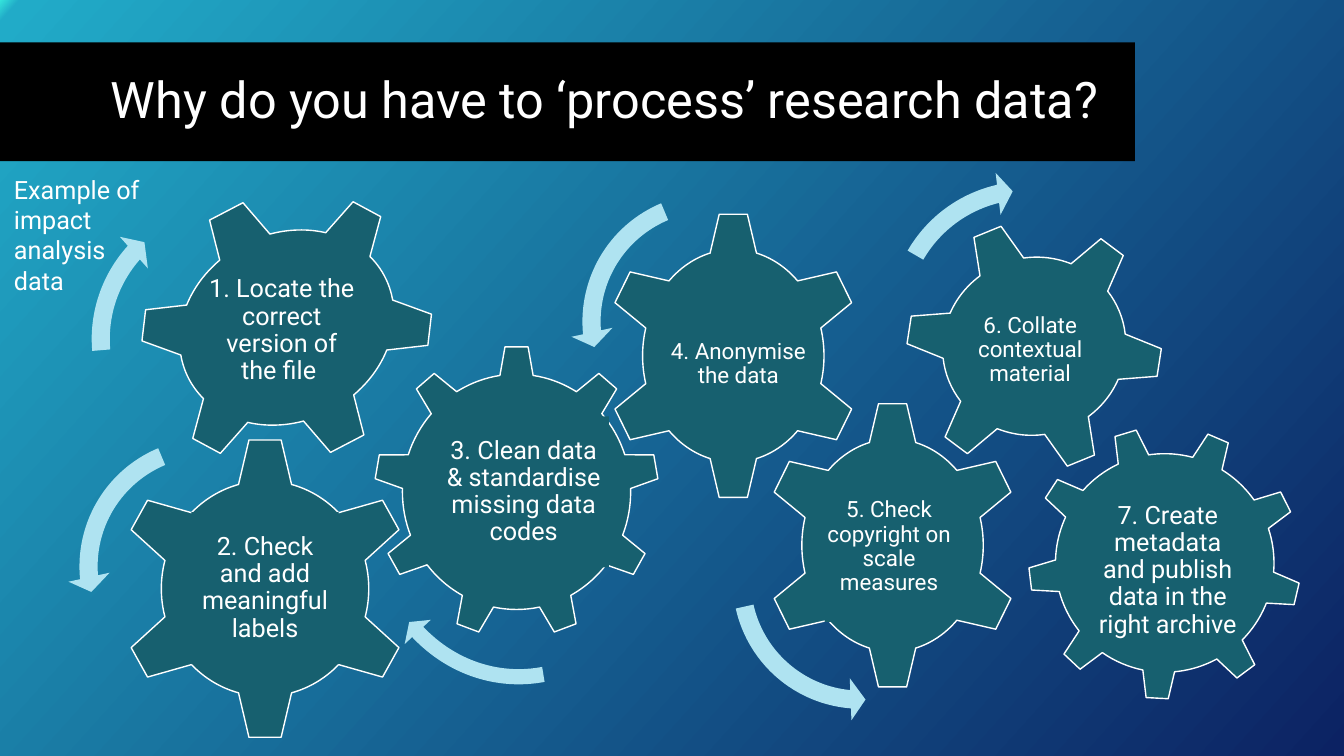
from copy import deepcopy

from pptx import Presentation
from pptx.dml.color import RGBColor
from pptx.enum.shapes import MSO_SHAPE
from pptx.enum.text import MSO_ANCHOR, PP_ALIGN
from pptx.util import Inches, Pt

FONT, WHITE, BLACK, TEAL, PALE = "Roboto", "FFFFFF", "000000", "17606F", "AFE3F1"
CELL = Inches(1)  # the layout grid has square cells: columns across, rows down


def grid(*cells):
    """Turn columns and rows of the grid into slide lengths."""
    return [round(cell * CELL) for cell in cells]


def write(shape, text, size, margin=0.1, spacing=1.0, align=PP_ALIGN.LEFT, anchor=MSO_ANCHOR.TOP):
    frame = shape.text_frame
    frame.word_wrap = True
    frame.vertical_anchor = anchor
    frame.margin_left = frame.margin_right = Inches(margin)
    frame.margin_top = frame.margin_bottom = Inches(min(margin, 0.05))
    paragraph = frame.paragraphs[0]
    paragraph.text = text
    paragraph.alignment = align
    paragraph.line_spacing = spacing
    paragraph.font.name = FONT
    paragraph.font.size = Pt(size)
    paragraph.font.color.rgb = RGBColor.from_string(WHITE)


presentation = Presentation()
presentation.slide_width, presentation.slide_height = grid(13.333, 7.5)
slide = presentation.slides.add_slide(presentation.slide_layouts[5])
shapes = slide.shapes

# Background: a diagonal gradient with a bright corner
background = slide.background.fill
background.gradient()
background.gradient_angle = 360 - 42
stop_list = slide.element.xpath(".//a:gsLst")[0]
stop_list.append(deepcopy(stop_list[-1]))
gradient = [(0, "36E6DD"), (0.01, "21ABC8"), (1, "0C2263")]
for stop, (position, color) in zip(background.gradient_stops, gradient):
    stop.position = position
    stop.color.rgb = RGBColor.from_string(color)

# Title band
title = shapes.title
title.left, title.top, title.width, title.height = grid(0, 0.42, 11.26, 1.18)
title.fill.solid()
title.fill.fore_color.rgb = RGBColor.from_string(BLACK)
write(title, "Why do you have to ‘process’ research data?", 36, spacing=0.9, anchor=MSO_ANCHOR.MIDDLE)
title.text_frame.margin_left = Inches(1.1)

# Gears: kind, place, rotation, label, label place, size, label filled
SIX, NINE = MSO_SHAPE.GEAR_6, MSO_SHAPE.GEAR_9
gears = [
    (SIX, (1.35, 1.92, 2.99, 2.66), 332.5, "1. Locate the correct version of the file ",
     (2.04, 2.58, 1.51, 1.4), 18, False),
    (SIX, (1.16, 4.33, 2.94, 3.02), 0, "2. Check and add meaningful labels",
     (1.9, 5.08, 1.46, 1.51), 18, True),
    (NINE, (3.71, 3.43, 2.83, 2.9), 0, "3. Clean data & standardise missing data codes",
     (4.35, 4.13, 1.69, 1.5), 18, True),
    (SIX, (5.99, 2.09, 2.57, 2.88), 0, "4. Anonymise the data",
     (6.59, 2.87, 1.47, 1.49), 16, False),
    (SIX, (7.57, 3.97, 2.57, 2.88), 0, "5. Check copyright on scale measures",
     (8.18, 4.68, 1.28, 1.49), 16, True),
    (SIX, (8.97, 2.18, 2.58, 2.51), 337.8, "6. Collate contextual material",
     (9.53, 2.98, 1.38, 0.99), 16, True),
    (NINE, (10.2, 4.23, 2.71, 2.71), 23.2, "7. Create metadata and publish data in the right archive",
     (10.83, 4.97, 1.51, 1.38), 18, False),
]
for kind, place, rotation, text, label_place, size, filled in gears:
    gear = shapes.add_shape(kind, *grid(*place))
    gear.shadow.inherit = False
    gear.rotation = rotation
    gear.fill.solid()
    gear.fill.fore_color.rgb = RGBColor.from_string(TEAL)
    gear.line.color.rgb = RGBColor.from_string(WHITE)
    gear.line.width = Pt(1)
    label = shapes.add_textbox(*grid(*label_place))
    if filled:
        label.fill.solid()
        label.fill.fore_color.rgb = RGBColor.from_string(TEAL)
    margin = 0.03 if size == 18 else 0.02
    write(label, text, size, margin, 0.9, PP_ALIGN.CENTER, MSO_ANCHOR.MIDDLE)

# Arrows leading from gear to gear
RIGHT, LEFT = MSO_SHAPE.CIRCULAR_ARROW, MSO_SHAPE.LEFT_CIRCULAR_ARROW
right_bend = (0.06, 3.94, 133.14, 105.08, 0.07)
left_bend = (0.065, 4.3, 104.89, 148.38, 0.075)
long_bend = (0.047, 2.99, 25.32, 210.52, 0.055)
arrows = [
    (RIGHT, (0.79, 1.87, 2.99, 2.99), 0, right_bend),
    (LEFT, (0.67, 4.23, 2.78, 2.78), 0, left_bend),
    (RIGHT, (3.42, 3.56, 3.45, 3.21), 90, long_bend),
    (LEFT, (5.66, 1.8, 2.78, 2.78), 0, left_bend),
    (LEFT, (7.15, 4.37, 2.78, 2.78), 280.1, left_bend),
    (RIGHT, (8.7, 1.68, 2.99, 2.99), 34.9, right_bend),
]
for kind, place, rotation, bend in arrows:
    arrow = shapes.add_shape(kind, *grid(*place))
    arrow.shadow.inherit = False
    arrow.rotation = rotation
    arrow.fill.solid()
    arrow.fill.fore_color.rgb = RGBColor.from_string(PALE)
    arrow.line.fill.background()
    for index, value in enumerate(bend):
        arrow.adjustments[index] = value

example = shapes.add_textbox(*grid(0.04, 1.68, 1.5, 1.31))
write(example, "Example of impact analysis data", 18)

presentation.save("out.pptx")
